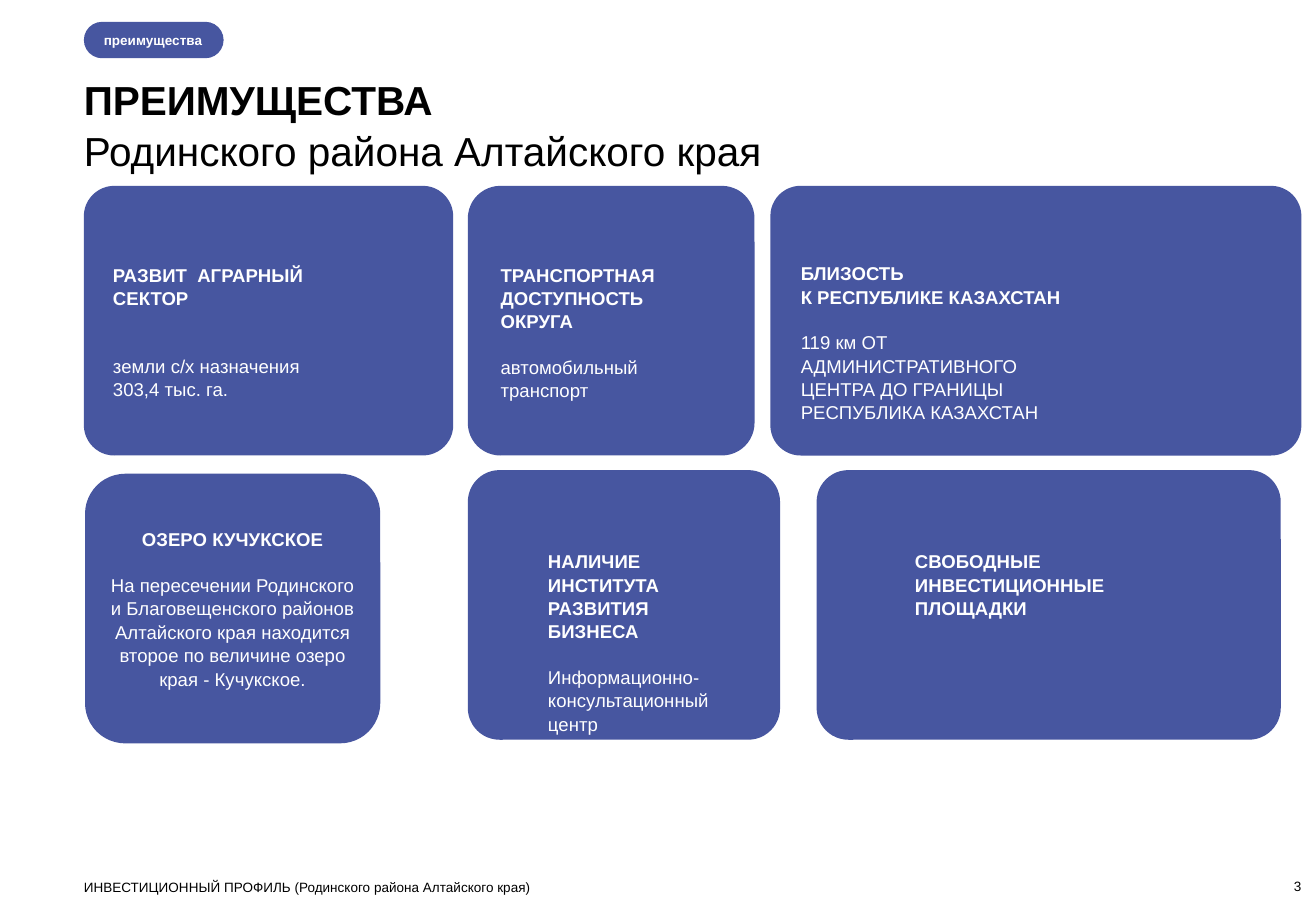
from pptx import Presentation
from pptx.dml.color import RGBColor
from pptx.enum.shapes import MSO_SHAPE
from pptx.enum.text import MSO_ANCHOR, PP_ALIGN
from pptx.util import Inches, Pt

BLUE = RGBColor(0x47, 0x56, 0xA0)
WHITE = RGBColor(255, 255, 255)
BLACK = RGBColor(0, 0, 0)
LEFT, CENTER, RIGHT = PP_ALIGN.LEFT, PP_ALIGN.CENTER, PP_ALIGN.RIGHT
TOP, MIDDLE, BOTTOM = MSO_ANCHOR.TOP, MSO_ANCHOR.MIDDLE, MSO_ANCHOR.BOTTOM
LINE = 13.2  # height of one card text line, in points

deck = Presentation()
deck.slide_width, deck.slide_height = Inches(10.83), Inches(7.5)
slide = deck.slides.add_slide(deck.slide_layouts[6])


def panel(x, y, w, h, bend):
    shape = slide.shapes.add_shape(MSO_SHAPE.ROUNDED_RECTANGLE,
                                   Inches(x), Inches(y), Inches(w), Inches(h))
    shape.adjustments[0] = bend
    shape.shadow.inherit = False
    shape.fill.solid()
    shape.fill.fore_color.rgb = BLUE
    shape.line.fill.background()
    return shape


def write(shape, heads, body, size, color, align=LEFT, anchor=TOP,
          pads=(0, 0), gap=0):
    """Bold head lines, then plain body lines, the first after a gap."""
    frame = shape.text_frame
    frame.word_wrap = True
    frame.vertical_anchor = anchor
    frame.margin_left, frame.margin_right = [Inches(pad) for pad in pads]
    frame.margin_top = frame.margin_bottom = 0
    frame.text = "\n".join(heads + body)
    for i, para in enumerate(frame.paragraphs):
        para.alignment = align
        para.line_spacing = 1.05
        if i == len(heads) and gap:
            para.space_before = Pt(gap)
        font = para.runs[0].font
        font.name, font.size, font.bold = "Arial", Pt(size), i < len(heads)
        font.color.rgb = color


# Section tag
tag = panel(0.69, 0.18, 1.15, 0.3, 0.5)
write(tag, ["преимущества"], [], 8, WHITE, anchor=MIDDLE, pads=(0.12, 0))

# Card panels: left, top, width, corner
for x, y, w, bend in [
    (0.69, 1.53, 3.04, 0.113), (3.85, 1.53, 2.36, 0.121),
    (6.34, 1.53, 4.37, 0.112), (3.85, 3.87, 2.57, 0.118),
    (6.72, 3.87, 3.82, 0.118),
]:
    panel(x, y, w, 2.22, bend)

# Lake card
lake = panel(0.7, 3.9, 2.43, 2.22, 0.149)
write(lake, ["ОЗЕРО КУЧУКСКОЕ"],
      ["На пересечении Родинского и Благовещенского районов Алтайского края "
       "находится второе по величине озеро края - Кучукское."],
      11, WHITE, CENTER, MIDDLE, (0.1, 0.1), LINE)

# Card texts: left, top, width, height, heads, body, gap in lines
for x, y, w, h, heads, body, rows in [
    (0.93, 2.16, 1.8, 1.11, ["РАЗВИТ  АГРАРНЫЙ СЕКТОР"],
     ["земли с/х назначения 303,4 тыс. га."], 2),
    (4.12, 2.16, 1.85, 1.11, ["ТРАНСПОРТНАЯ", "ДОСТУПНОСТЬ", "ОКРУГА"],
     ["автомобильный транспорт"], 1),
    (6.59, 2.15, 2.27, 1.3, ["БЛИЗОСТЬ", "К РЕСПУБЛИКЕ КАЗАХСТАН"],
     ["119 км ОТ АДМИНИСТРАТИВНОГО ЦЕНТРА ДО ГРАНИЦЫ РЕСПУБЛИКА КАЗАХСТАН"], 1),
    (4.51, 4.52, 1.56, 1.48, ["НАЛИЧИЕ ИНСТИТУТА РАЗВИТИЯ БИЗНЕСА"],
     ["Информационно-консультационный центр"], 1),
    (7.53, 4.52, 1.63, 0.74, ["СВОБОДНЫЕ ИНВЕСТИЦИОННЫЕ ПЛОЩАДКИ"], [], 0),
]:
    box = slide.shapes.add_textbox(Inches(x), Inches(y), Inches(w), Inches(h))
    write(box, heads, body, 11, WHITE, gap=rows * LINE)

# Title, footer and page number
for x, y, w, h, heads, body, size, align, anchor in [
    (0.69, 0.6, 9.66, 1.21, ["ПРЕИМУЩЕСТВА"],
     ["Родинского района Алтайского края"], 24, LEFT, TOP),
    (0.69, 7.23, 8, 0.13, [],
     ["ИНВЕСТИЦИОННЫЙ ПРОФИЛЬ (Родинского района Алтайского края)"],
     8, LEFT, TOP),
    (9.91, 7.23, 0.8, 0.13, [], ["3"], 8, RIGHT, BOTTOM),
]:
    box = slide.shapes.add_textbox(Inches(x), Inches(y), Inches(w), Inches(h))
    write(box, heads, body, size, BLACK, align, anchor)

deck.save("out.pptx")
